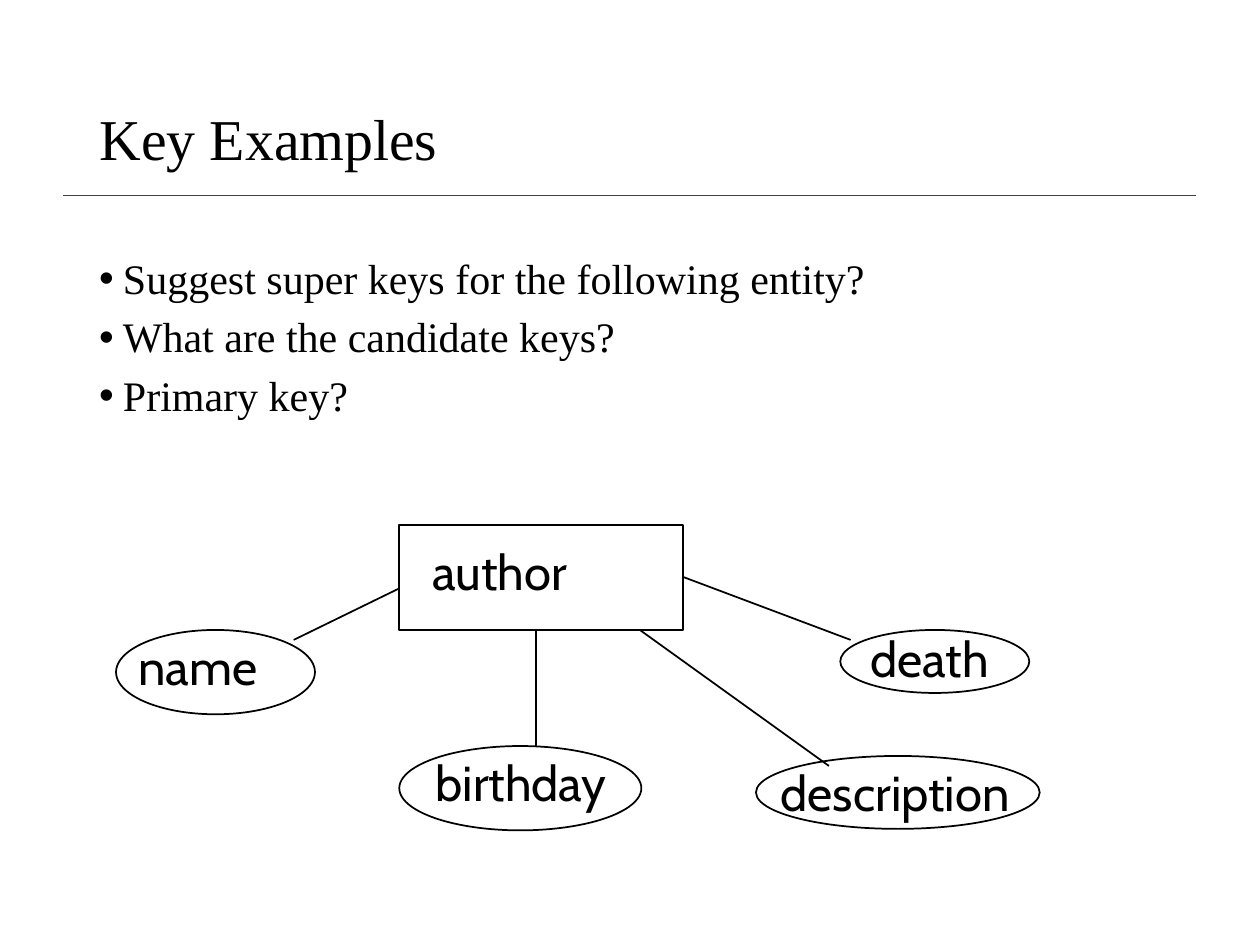
"""Build the Key Examples slide: three questions above an author entity diagram."""

from dataclasses import dataclass

from lxml.etree import SubElement
from pptx import Presentation
from pptx.dml.color import RGBColor
from pptx.enum.shapes import MSO_CONNECTOR, MSO_SHAPE
from pptx.enum.text import MSO_ANCHOR, PP_ALIGN
from pptx.oxml.ns import qn
from pptx.slide import Slide
from pptx.text.text import _Paragraph as Paragraph
from pptx.util import Cm, Pt

COLORS = {"ink": "000000", "rule": "404040", "paper": "FFFFFF"}
SERIF, SANS = "Times New Roman", "Cabin"
MARGIN, CONTENT_WIDTH = 1.75, 21.89
LABEL_HEIGHT = 1.45
BULLET_INDENT = 0.48
QUESTIONS = (
    "Suggest super keys for the following entity?",
    "What are the candidate keys?",
    "Primary key?",
)


@dataclass(frozen=True)
class Node:
    """An outlined shape with its separately placed label, in centimetres."""

    text: str
    outline: tuple[float, float, float, float]
    label: tuple[float, float, float]
    preset: MSO_SHAPE = MSO_SHAPE.OVAL


@dataclass(frozen=True)
class Link:
    """A straight line between two points, in centimetres."""

    start: tuple[float, float]
    end: tuple[float, float]
    color: str = "ink"


NODES = (
    Node("author", (8.05, 10.59, 5.72, 2.11), (8.46, 10.8, 4.65), MSO_SHAPE.RECTANGLE),
    Node("name", (2.34, 12.7, 4.01, 1.7), (2.54, 12.7, 3.61)),
    Node("birthday", (8.05, 15.04, 4.88, 1.7), (8.53, 15.04, 4.88)),
    Node("death", (16.94, 12.7, 3.81, 1.27), (17.3, 12.55, 5.51)),
    Node("description", (15.24, 15.24, 5.72, 1.47), (15.49, 15.24, 7.42)),
)
LINKS = (
    Link((1.27, 3.94), (24.1, 3.94), "rule"),
    Link((8.05, 11.86), (5.92, 12.9)),
    Link((10.8, 12.7), (10.8, 15.04)),
    Link((12.9, 12.7), (16.71, 15.44)),
    Link((13.77, 11.63), (17.15, 12.9)),
)


def color(name: str) -> RGBColor:
    """Return a palette colour."""
    return RGBColor.from_string(COLORS[name])


def style_text(para: Paragraph, text: str, font: str, size: float) -> None:
    """Write left-aligned text in one font."""
    para.text = text
    para.alignment = PP_ALIGN.LEFT
    para.font.name = font
    para.font.size = Pt(size)
    para.font.color.rgb = color("ink")


def add_title(page: Slide, text: str) -> None:
    """Place and format the title placeholder."""
    title = page.shapes.title
    title.left, title.top = Cm(MARGIN), Cm(1.02)
    title.width, title.height = Cm(CONTENT_WIDTH), Cm(3.68)
    title.text_frame.vertical_anchor = MSO_ANCHOR.MIDDLE
    para = title.text_frame.paragraphs[0]
    style_text(para, text, SERIF, 33)
    para.line_spacing = 0.9


def add_questions(page: Slide) -> None:
    """Add the bulleted questions."""
    box = page.shapes.add_textbox(Cm(MARGIN), Cm(5.08), Cm(CONTENT_WIDTH), Cm(12.09))
    frame = box.text_frame
    frame.word_wrap = True
    for index, question in enumerate(QUESTIONS):
        para = frame.add_paragraph() if index else frame.paragraphs[0]
        style_text(para, question, SERIF, 24)
        para.line_spacing = 0.9
        para.space_before = Pt(7.5)
        properties = para._p.get_or_add_pPr()
        properties.set("marL", str(Cm(BULLET_INDENT)))
        properties.set("indent", str(-Cm(BULLET_INDENT)))
        bullet_font = SubElement(properties, qn("a:buFont"))
        bullet_font.set("typeface", "Arial")
        bullet = SubElement(properties, qn("a:buChar"))
        bullet.set("char", "•")
        properties.append(properties.find(qn("a:defRPr")))


def add_label(page: Slide, node: Node) -> None:
    """Add the name of a node."""
    left, top, width = node.label
    box = page.shapes.add_textbox(Cm(left), Cm(top), Cm(width), Cm(LABEL_HEIGHT))
    box.text_frame.word_wrap = True
    style_text(box.text_frame.paragraphs[0], node.text, SANS, 28)


def add_outline(page: Slide, node: Node) -> None:
    """Add the unfilled outline of a node."""
    shape = page.shapes.add_shape(node.preset, *map(Cm, node.outline))
    shape.shadow.inherit = False
    shape.fill.background()
    shape.line.color.rgb = color("ink")
    shape.line.width = Pt(1)


def add_link(page: Slide, link: Link) -> None:
    """Add a straight connector without a shadow."""
    line = page.shapes.add_connector(
        MSO_CONNECTOR.STRAIGHT, *map(Cm, link.start + link.end)
    )
    line.line.color.rgb = color(link.color)
    line.line.width = Pt(1)
    SubElement(line._element.spPr, qn("a:effectLst"))


def main() -> None:
    """Build and save the deck."""
    deck = Presentation()
    deck.slide_width, deck.slide_height = Cm(25.4), Cm(19.05)
    page = deck.slides.add_slide(deck.slide_layouts[5])
    page.background.fill.solid()
    page.background.fill.fore_color.rgb = color("paper")
    add_title(page, "Key Examples")
    add_questions(page)
    for node in NODES:
        add_outline(page, node)
        add_label(page, node)
    for link in LINKS:
        add_link(page, link)
    deck.save("out.pptx")


if __name__ == "__main__":
    main()
